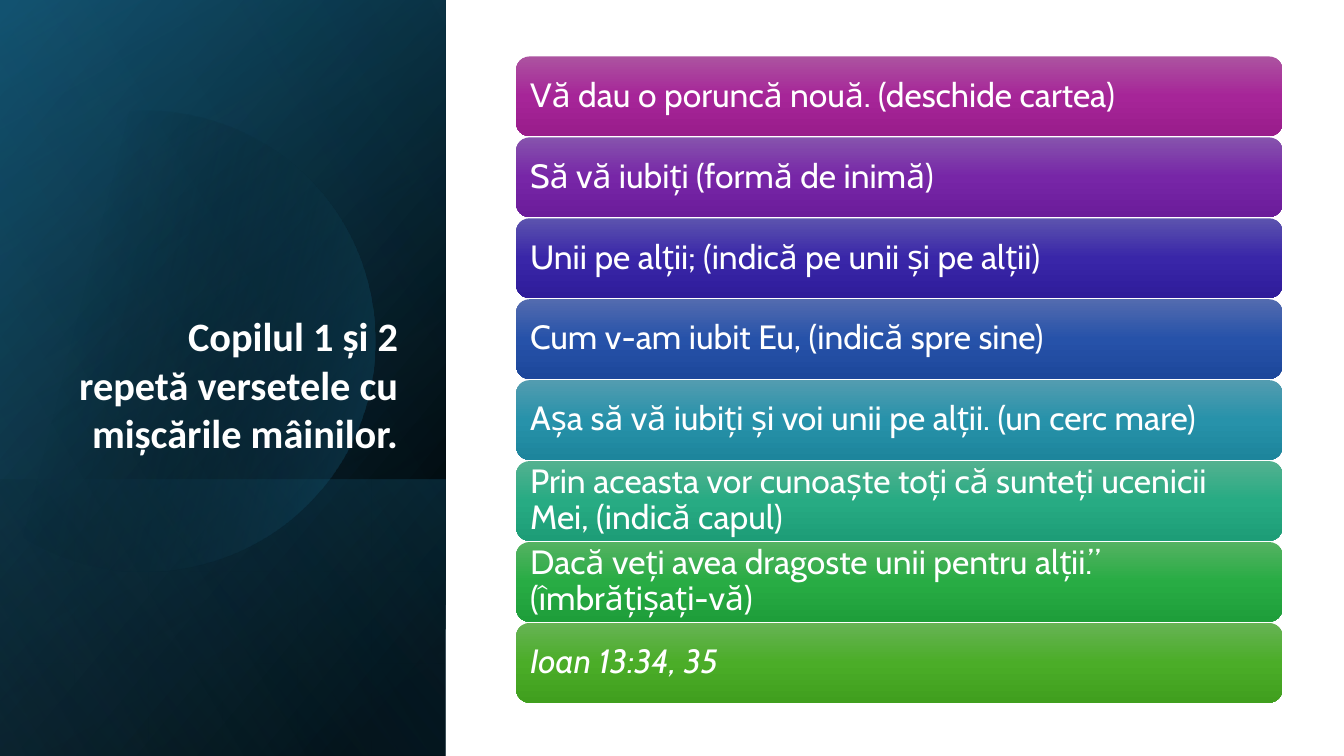
import lxml.etree
import pptx
import pptx.dml.color
import pptx.enum.shapes
import pptx.enum.text
import pptx.oxml.ns
import pptx.util

WIDTH, HEIGHT = 13.33, 7.5
PANEL_WIDTH = 4.42
LIST_LEFT, LIST_TOP, LIST_WIDTH = 5.12, 0.56, 7.6
ROW_HEIGHT, LAST_ROW_TOP = 0.79, 6.18
ROW_INSET = 0.04

COLOURS = {
    "white": "FFFFFF", "black": "000000", "navy": "104862",
    "teal": "156082", "sky": "46B1E1",
}

# Each row: text, italic, gradient from top to bottom
ROWS = [
    ("Vă dau o poruncă nouă. (deschide cartea)", False, ("AC53A0", "A62598", "991C8B")),
    ("Să vă iubiți (formă de inimă)", False, ("8653AD", "7726A7", "6B1C9A")),
    ("Unii pe alții; (indică pe unii și pe alții)", False, ("5C53AE", "3926A8", "2F1C9A")),
    ("Cum v-am iubit Eu, (indică spre sine)", False, ("536BAF", "2652A9", "1D479B")),
    ("Așa să vă iubiți și voi unii pe alții. (un cerc mare)", False,
     ("539CB0", "2792AA", "1D859C")),
    ("Prin aceasta vor cunoaște toți că sunteți ucenicii Mei, (indică capul)", False,
     ("53B190", "27AB83", "1D9D77")),
    ("Dacă veți avea dragoste unii pentru alții.” (îmbrățișați-vă)", False,
     ("54B262", "28AC44", "1E9E3A")),
    ("Ioan 13:34, 35", True, ("66B354", "4BAD28", "409F1E")),
]

# Each segment ends at its last point; three points make a curve
DISC_START = (1.49, 1.1)
DISC_SEGMENTS = [
    [(2.46, 1.12), (3.35, 1.77), (3.63, 2.75)],
    [(3.98, 3.97), (3.28, 5.23), (2.07, 5.58)],
    [(1.31, 5.8), (0.53, 5.61), (-0.03, 5.14)],
    [(-0.15, 5.03)],
    [(-0.15, 1.75)],
    [(0, 1.61)],
    [(0.23, 1.42), (0.5, 1.28), (0.8, 1.19)],
    [(1.03, 1.13), (1.26, 1.1), (1.49, 1.1)],
]


def inches(*lengths):
    return [pptx.util.Inches(length) for length in lengths]


def fill_gradient(shape, stops, angle):
    """Fill with stops of (position, hex, opacity), all in percent; no line or shadow."""
    qn = pptx.oxml.ns.qn
    shape.shadow.inherit = False
    shape.line.fill.background()
    shape.fill.background()
    gradient = lxml.etree.Element(qn("a:gradFill"), rotWithShape="1")
    stop_list = lxml.etree.SubElement(gradient, qn("a:gsLst"))
    for position, colour, opacity in stops:
        stop = lxml.etree.SubElement(stop_list, qn("a:gs"), pos=str(position * 1000))
        value = lxml.etree.SubElement(stop, qn("a:srgbClr"), val=colour)
        if opacity < 100:
            lxml.etree.SubElement(value, qn("a:alpha"), val=str(opacity * 1000))
    lxml.etree.SubElement(gradient, qn("a:lin"), ang=str(angle * 60000), scaled="0")
    properties = shape.element.spPr
    properties.replace(properties.find(qn("a:noFill")), gradient)


def add_panel(page, top, height, stops, angle):
    """Cover the left column from top to top + height with a quarter-turned, flipped box."""
    box = page.shapes.add_shape(
        pptx.enum.shapes.MSO_SHAPE.RECTANGLE,
        *inches((PANEL_WIDTH - height) / 2, top + (height - PANEL_WIDTH) / 2,
                height, PANEL_WIDTH))
    box.rotation = 90
    box.element.spPr.xfrm.set("flipH", "1")
    fill_gradient(box, stops, angle)


def add_disc(page):
    """Draw the clipped disc: straight segments first, then bend those with three points."""
    qn = pptx.oxml.ns.qn
    builder = page.shapes.build_freeform(*inches(*DISC_START))
    builder.add_line_segments([inches(*segment[-1]) for segment in DISC_SEGMENTS], close=True)
    disc = builder.convert_to_shape()
    for line, segment in zip(list(disc.element.iter(qn("a:lnTo"))), DISC_SEGMENTS):
        if len(segment) == 3:
            curve = lxml.etree.Element(qn("a:cubicBezTo"))
            for point in segment:
                x, y = inches(*point)
                lxml.etree.SubElement(curve, qn("a:pt"), x=str(x - disc.left),
                                      y=str(y - disc.top))
            line.getparent().replace(line, curve)
    fill_gradient(disc, [(29, COLOURS["black"], 0), (100, COLOURS["teal"], 43)], 14)


def write_text(shape, text, *, font, size, align, anchor, margins,
               bold=False, italic=False, spacing=1.0):
    """Set one formatted paragraph; margins are left, top, right, bottom."""
    frame = shape.text_frame
    frame.word_wrap = True
    frame.auto_size = pptx.enum.text.MSO_AUTO_SIZE.NONE
    frame.vertical_anchor = anchor
    (frame.margin_left, frame.margin_top,
     frame.margin_right, frame.margin_bottom) = inches(*margins)
    para = frame.paragraphs[0]
    para.alignment = align
    para.line_spacing = spacing
    span = para.add_run()
    span.text = text
    span.font.name = font
    span.font.size = pptx.util.Pt(size)
    span.font.bold = bold
    span.font.italic = italic
    span.font.color.rgb = pptx.dml.color.RGBColor.from_string(COLOURS["white"])


def add_title(page):
    title = page.shapes.title
    title.left, title.top, title.width, title.height = inches(0.64, 1.84, 3.41, 3.21)
    write_text(title, "Copilul 1 și 2 repetă versetele cu mișcările mâinilor.",
               font="Calibri", size=28.8, bold=True,
               align=pptx.enum.text.PP_ALIGN.RIGHT,
               anchor=pptx.enum.text.MSO_ANCHOR.BOTTOM,
               margins=(0.1, 0.05, 0.1, 0.52))
    # Bring the title in front of the panels
    title.element.getparent().append(title.element)


def add_verse(page, index, text, italic, shades):
    top = LIST_TOP + index * (LAST_ROW_TOP - LIST_TOP) / (len(ROWS) - 1)
    bar = page.shapes.add_shape(pptx.enum.shapes.MSO_SHAPE.ROUNDED_RECTANGLE,
                                *inches(LIST_LEFT, top, LIST_WIDTH, ROW_HEIGHT))
    fill_gradient(bar, [(50 * i, shade, 100) for i, shade in enumerate(shades)], 90)
    label = page.shapes.add_textbox(
        *inches(LIST_LEFT + ROW_INSET, top + ROW_INSET,
                LIST_WIDTH - 2 * ROW_INSET, ROW_HEIGHT - 2 * ROW_INSET))
    write_text(label, text, font="Cabin", size=24, italic=italic, spacing=0.9,
               align=pptx.enum.text.PP_ALIGN.LEFT,
               anchor=pptx.enum.text.MSO_ANCHOR.MIDDLE,
               margins=(0.1, 0.1, 0.1, 0.1))


def main():
    deck = pptx.Presentation()
    deck.slide_width, deck.slide_height = inches(WIDTH, HEIGHT)
    page = deck.slides.add_slide(deck.slide_layouts[5])

    black, teal = COLOURS["black"], COLOURS["teal"]
    add_panel(page, 0, HEIGHT, [(8, black, 100), (100, COLOURS["navy"], 100)], 50)
    add_panel(page, 0, HEIGHT, [(0, black, 0), (99, teal, 46)], 30)
    add_panel(page, 4.76, 2.74, [(2, teal, 29), (100, black, 30)], 130)
    add_disc(page)
    add_panel(page, 0, HEIGHT, [(0, black, 0), (99, COLOURS["sky"], 11)], 120)

    add_title(page)
    for index, row in enumerate(ROWS):
        add_verse(page, index, *row)
    deck.save("out.pptx")


if __name__ == "__main__":
    main()
